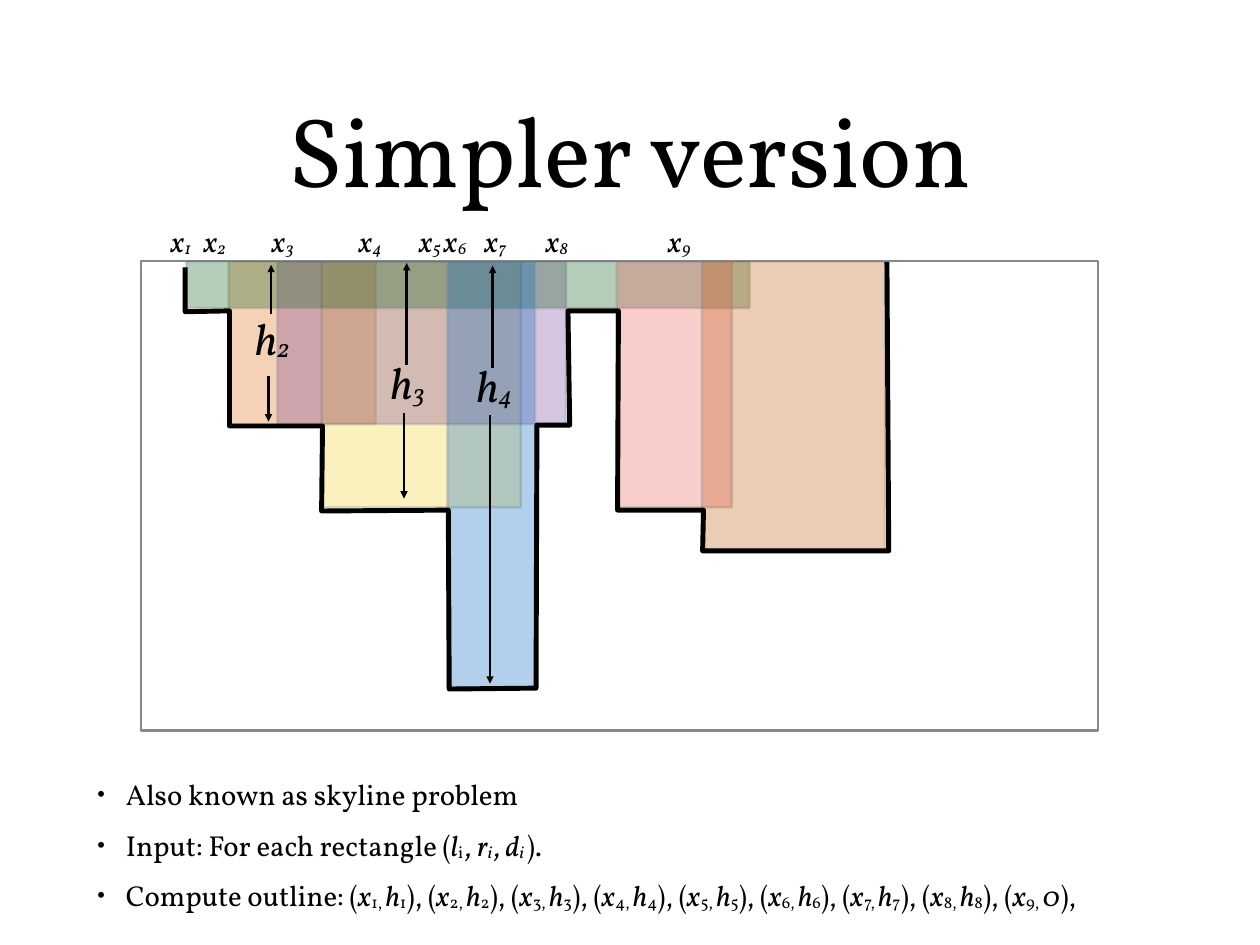
import pptx
import pptx.dml.color
import pptx.enum.shapes
import pptx.enum.text
import pptx.oxml
import pptx.oxml.ns
import pptx.util
from pptx.util import Inches

RGBColor = pptx.dml.color.RGBColor
BLACK = RGBColor(0x00, 0x00, 0x00)
GREY = RGBColor(0x85, 0x88, 0x8D)
ORANGE = RGBColor(0xDE, 0x6A, 0x10)
YELLOW = RGBColor(0xF5, 0xD3, 0x28)
PURPLE = RGBColor(0x77, 0x3F, 0x9B)
GREEN = RGBColor(0x0B, 0x5D, 0x18)
BLUE = RGBColor(0x03, 0x65, 0xC0)
RED = RGBColor(0xEC, 0x5C, 0x57)
BROWN = RGBColor(0xBD, 0x59, 0x0C)

FONT = "Vollkorn"
MIDDLE = pptx.enum.text.MSO_ANCHOR.MIDDLE
LEFT = pptx.enum.text.PP_ALIGN.LEFT
CENTER = pptx.enum.text.PP_ALIGN.CENTER
NO_FIT = pptx.enum.text.MSO_AUTO_SIZE.NONE
GROW = pptx.enum.text.MSO_AUTO_SIZE.SHAPE_TO_FIT_TEXT

# Distance from the frame's left, width, depth below the frame's top
BUILDINGS = [
    (0.99, 1.66, 1.84, ORANGE),
    (2.04, 2.25, 2.78, YELLOW),
    (1.54, 3.26, 1.84, PURPLE),
    (0.51, 6.36, 0.53, GREEN),
    (3.46, 0.99, 4.81, BLUE),
    (5.37, 1.30, 2.78, RED),
    (6.33, 2.07, 3.25, BROWN),
]
SKYLINE = [
    (0.50, 0.07), (0.50, 0.57), (1.00, 0.56), (1.00, 1.86), (2.05, 1.86), (2.04, 2.82),
    (3.47, 2.81), (3.48, 4.83), (4.46, 4.82), (4.47, 1.85), (4.84, 1.85), (4.82, 0.56),
    (5.39, 0.56), (5.38, 2.81), (6.35, 2.81), (6.34, 3.27), (8.44, 3.27), (8.42, 0.01),
]
# Label, its left and top, then start and end of the arrows up and down
HEIGHTS = [
    ("*h~3~*", 2.76, 0.97, (1.17, 0.02), (1.71, 2.68)),
    ("*h~4~*", 3.73, 1.00, (1.20, 0.05), (1.74, 4.77)),
    ("*h~2~*", 1.23, 0.47, (0.59, 0.04), (1.30, 1.81)),
]
X_LABELS = "*x~1~\tx~2~\tx~3~\tx~4~\tx~5 ~x~6~\tx~7~\tx~8~\tx~9~*"
X_STOPS = [0.37, 1.14, 2.12, 2.80, 3.54, 4.23, 5.61]

PAIRS = ", ".join(f"(*x*~{n}, ~*h*~{n}~)" for n in range(1, 9))
POINTS = [
    "Also known as skyline problem",
    "Input: For each rectangle (*l*~i ~*, r~i ~, d~i ~*).",
    f"Compute outline: {PAIRS}, (*x*~9, ~*0*),",
]


def add_xml(parent, markup):
    namespace = pptx.oxml.ns.nsdecls("a")
    parent.append(pptx.oxml.parse_xml(markup.replace("/>", f" {namespace}/>", 1)))


def write(paragraph, text, size, color=BLACK, align=LEFT):
    """Add text in which * switches italics and ~ switches subscript."""
    paragraph.alignment = align
    italic = subscript = False
    chunk = ""
    for char in text + "*":
        if char not in "*~":
            chunk += char
            continue
        if chunk:
            run = paragraph.add_run()
            run.text = chunk
            run.font.name = FONT
            run.font.size = pptx.util.Pt(size)
            run.font.italic = italic
            run.font.color.rgb = color
            if subscript:
                run._r.get_or_add_rPr().set("baseline", "-6000")
            chunk = ""
        if char == "*":
            italic = not italic
        else:
            subscript = not subscript


def prepare(frame, wrap=True, fit=NO_FIT):
    """Set the margins, anchor and fitting shared by all texts."""
    frame.margin_left = frame.margin_right = Inches(0.06)
    frame.margin_top = frame.margin_bottom = Inches(0.06)
    frame.vertical_anchor = MIDDLE
    frame.word_wrap = wrap
    frame.auto_size = fit
    return frame


def place(shape, left, top, width, height):
    shape.left, shape.top = Inches(left), Inches(top)
    shape.width, shape.height = Inches(width), Inches(height)


def add_title(slide, left, top, width, height):
    title = slide.shapes.title
    place(title, left, top, width, height)
    write(prepare(title.text_frame).paragraphs[0], "Simpler version", 80, align=CENTER)


def add_points(slide, left, top, width, height):
    body = slide.placeholders[1]
    place(body, left, top, width, height)
    frame = prepare(body.text_frame)
    for index, point in enumerate(POINTS):
        paragraph = frame.add_paragraph() if index else frame.paragraphs[0]
        write(paragraph, point, 23.4)
        paragraph.space_before = pptx.util.Pt(13)
        properties = paragraph._p.get_or_add_pPr()
        properties.set("marL", str(Inches(0.32)))
        properties.set("indent", str(Inches(-0.32)))
        add_xml(properties, '<a:buSzPct val="75000"/>')
        add_xml(properties, '<a:buChar char="•"/>')


def add_label(slide, text, size, left, top, width, height, wrap=False):
    label = slide.shapes.add_textbox(
        Inches(left), Inches(top), Inches(width), Inches(height))
    paragraph = prepare(label.text_frame, wrap, GROW).paragraphs[0]
    write(paragraph, text, size)
    return paragraph


def add_block(slide, left, top, width, height, color=None):
    """Add a grey-edged rectangle, see-through if it has a colour."""
    block = slide.shapes.add_shape(
        pptx.enum.shapes.MSO_SHAPE.RECTANGLE,
        Inches(left), Inches(top), Inches(width), Inches(height))
    block.shadow.inherit = False
    block.line.color.rgb = GREY
    block.line.width = pptx.util.Pt(2)
    if color is None:
        block.fill.background()
        return
    block.fill.solid()
    block.fill.fore_color.rgb = color
    for tint in block._element.spPr.iter(pptx.oxml.ns.qn("a:srgbClr")):
        add_xml(tint, '<a:alpha val="30000"/>')


def add_skyline(slide, left, top):
    corners = [(Inches(left + x), Inches(top + y)) for x, y in SKYLINE]
    builder = slide.shapes.build_freeform(*corners[0])
    builder.add_line_segments(corners[1:], close=False)
    skyline = builder.convert_to_shape()
    skyline.shadow.inherit = False
    skyline.fill.background()
    skyline.line.color.rgb = BLACK
    skyline.line.width = pptx.util.Pt(4)


def add_arrow(slide, x, start, end):
    arrow = slide.shapes.add_connector(
        pptx.enum.shapes.MSO_CONNECTOR.STRAIGHT,
        Inches(x), Inches(start), Inches(x), Inches(end))
    arrow.line.color.rgb = BLACK
    arrow.line.width = pptx.util.Pt(2)
    add_xml(arrow.line._get_or_add_ln(), '<a:tailEnd type="triangle"/>')
    add_xml(arrow._element.spPr, "<a:effectLst/>")


def add_diagram(slide, left, top, width, height):
    add_block(slide, left, top, width, height)
    for x, span, depth, color in BUILDINGS:
        add_block(slide, left + x, top, span, depth, color)
    add_skyline(slide, left, top)

    x_labels = add_label(
        slide, X_LABELS, 24, left + 0.28, top - 0.51, 10.23, 0.56, wrap=True)
    stops = "".join(f'<a:tab pos="{Inches(stop)}" algn="l"/>' for stop in X_STOPS)
    namespace = pptx.oxml.ns.nsdecls("a")
    x_labels._p.get_or_add_pPr().append(
        pptx.oxml.parse_xml(f"<a:tabLst {namespace}>{stops}</a:tabLst>"))

    for label, x, y, up, down in HEIGHTS:
        add_label(slide, label, 36, left + x, top + y, 0.54, 0.78)
        for shift, (start, end) in ((0.24, up), (0.21, down)):
            add_arrow(slide, left + x + shift, top + start, top + end)


def main():
    deck = pptx.Presentation()
    deck.slide_width, deck.slide_height = Inches(14.22), Inches(10.67)
    slide = deck.slides.add_slide(deck.slide_layouts[1])
    add_title(slide, 1.04, 0.49, 12.14, 2.36)
    add_diagram(slide, 1.59, 2.95, 10.8, 5.3)
    add_points(slide, 1.04, 8.49, 12.14, 2.1)
    deck.save("out.pptx")


if __name__ == "__main__":
    main()
